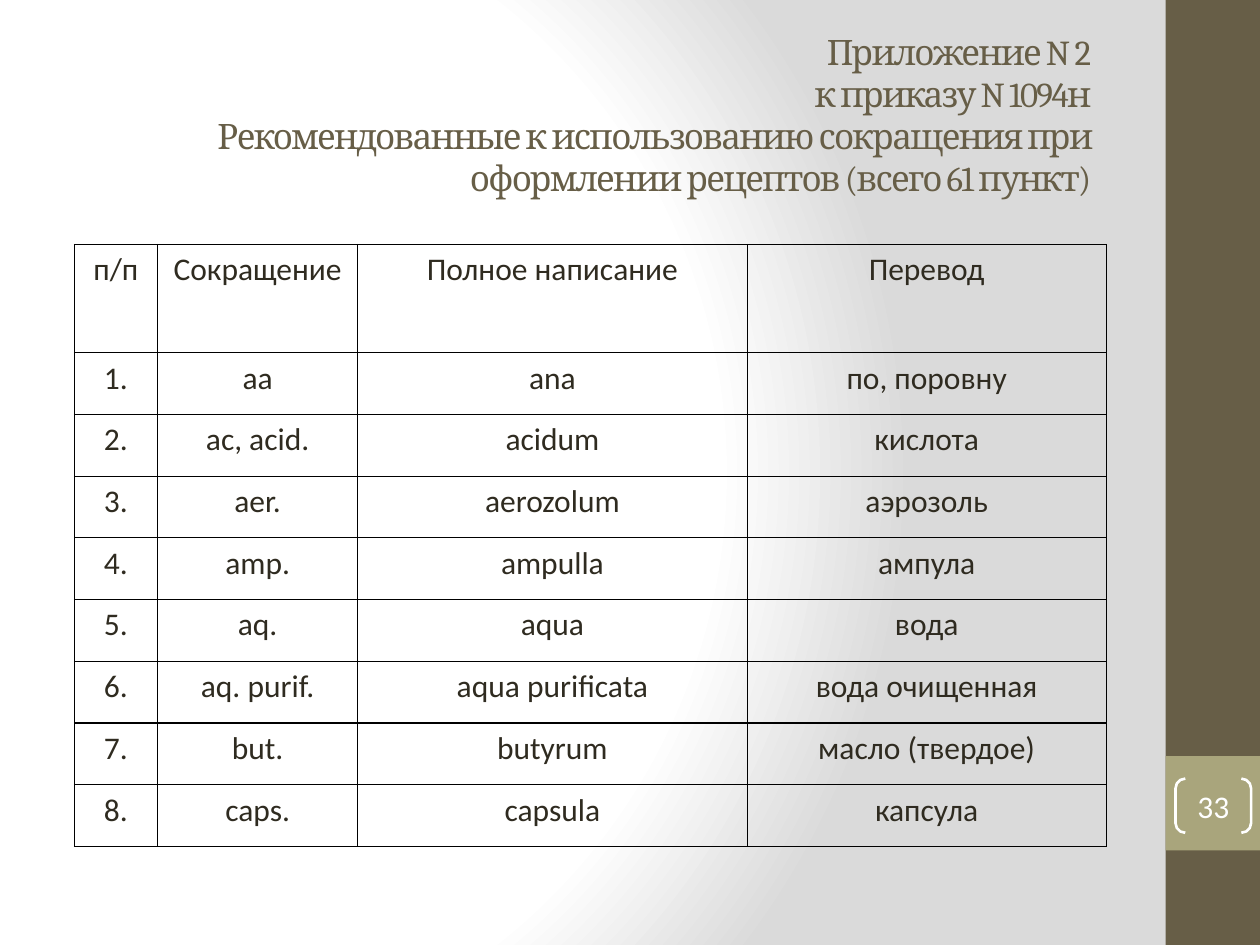
from lxml.etree import SubElement as Sub
from pptx import Presentation
from pptx.dml.color import RGBColor
from pptx.enum.shapes import MSO_SHAPE as Kind
from pptx.enum.text import MSO_ANCHOR as Anchor, MSO_AUTO_SIZE as Auto, PP_ALIGN as Align
from pptx.oxml import parse_xml
from pptx.oxml.ns import nsdecls, qn
from pptx.util import Inches, Pt


def color(text):
    return RGBColor.from_string(text)


def style(para, size, face, tint, align):
    para.alignment = align
    for run in para.runs:
        run.font.size = Pt(size)
        run.font.name = face
        run.font.bold = False
        run.font.color.rgb = color(tint)


prs = Presentation()
prs.slide_width, prs.slide_height = Inches(10), Inches(7.5)
slide = prs.slides.add_slide(prs.slide_layouts[5])
shapes = slide.shapes

fill = slide.background.fill
fill.gradient()
grad = slide.background._cSld.bg.bgPr.find(qn("a:gradFill"))
stops = "".join(
    f'<a:gs pos="{pos}000"><a:srgbClr val="{tint}"/></a:gs>'
    for pos, tint in ((0, "FFFFFF"), (75, "FFFFFF"), (100, "DADADA"))
)
grad.getparent().replace(grad, parse_xml(
    f'<a:gradFill {nsdecls("a")} rotWithShape="1"><a:gsLst>{stops}</a:gsLst>'
    '<a:path path="circle"><a:fillToRect l="20000" t="50000" r="100000" b="50000"/>'
    '</a:path></a:gradFill>'
))

for top, height, tint in ((0, 7.5, "675E47"), (6, 0.75, "A9A57C")):
    bar = shapes.add_shape(Kind.RECTANGLE, Inches(9.25), Inches(top), Inches(0.75), Inches(height))
    bar.shadow.inherit = False
    bar.fill.solid()
    bar.fill.fore_color.rgb = color(tint)
    bar.line.fill.background()

title = shapes.title
title.left, title.top = Inches(0.43), Inches(0.52)
title.width, title.height = Inches(8.33), Inches(0.77)
frame = title.text_frame
frame.text = (
    "Приложение N 2\vк приказу N 1094н\v"
    "Рекомендованные к использованию сокращения при оформлении рецептов (всего 61 пункт)"
)
frame.word_wrap = True
frame.auto_size = Auto.NONE
frame.vertical_anchor = Anchor.MIDDLE
style(frame.paragraphs[0], 20, "Cambria", "675E47", Align.RIGHT)
for run in frame.paragraphs[0].runs:
    run.font._element.set("spc", "-100")

head = ("п/п", "Сокращение", "Полное написание", "Перевод")
terms = (
    ("аа", "ana", "по, поровну"),
    ("ас, acid.", "acidum", "кислота"),
    ("aer.", "aerozolum", "аэрозоль"),
    ("amp.", "ampulla", "ампула"),
    ("aq.", "aqua", "вода"),
    ("aq. purif.", "aqua purificata", "вода очищенная"),
    ("but.", "butyrum", "масло (твердое)"),
    ("caps.", "capsula", "капсула"),
)
rows = [head] + [(f"{num}.", *term) for num, term in enumerate(terms, 1)]
table = shapes.add_table(
    len(rows), len(head), Inches(0.59), Inches(1.94), Inches(8.19), Inches(4.8)
).table
table.first_row = table.horz_banding = False
for col, width in zip(table.columns, (0.66, 1.59, 3.09, 2.85)):
    col.width = Inches(width)
for num, row in enumerate(rows):
    table.rows[num].height = Inches(0.49 if num else 0.86)
    for col, text in enumerate(row):
        cell = table.cell(num, col)
        cell.text_frame.text = text
        style(cell.text_frame.paragraphs[0], 18, "Calibri", "2F2B20", Align.CENTER)
        props = cell._tc.get_or_add_tcPr()
        for side in ("a:lnL", "a:lnR", "a:lnT", "a:lnB"):
            edge = Sub(props, qn(side), w=str(Pt(0.75)))
            Sub(Sub(edge, qn("a:solidFill")), qn("a:srgbClr"), val="000000")
        cell.fill.background()

page = shapes.add_shape(Kind.DOUBLE_BRACKET, Inches(9.33), Inches(6.18), Inches(0.6), Inches(0.43))
page.adjustments[0] = 0.18
page.shadow.inherit = False
page.fill.background()
page.line.color.rgb = color("FFFFFF")
page.line.width = Pt(1.5)
frame = page.text_frame
frame.text = "33"
frame.margin_left = frame.margin_right = frame.margin_top = frame.margin_bottom = 0
frame.vertical_anchor = Anchor.MIDDLE
style(frame.paragraphs[0], 18, "Calibri", "FFFFFF", Align.CENTER)

prs.save("out.pptx")
